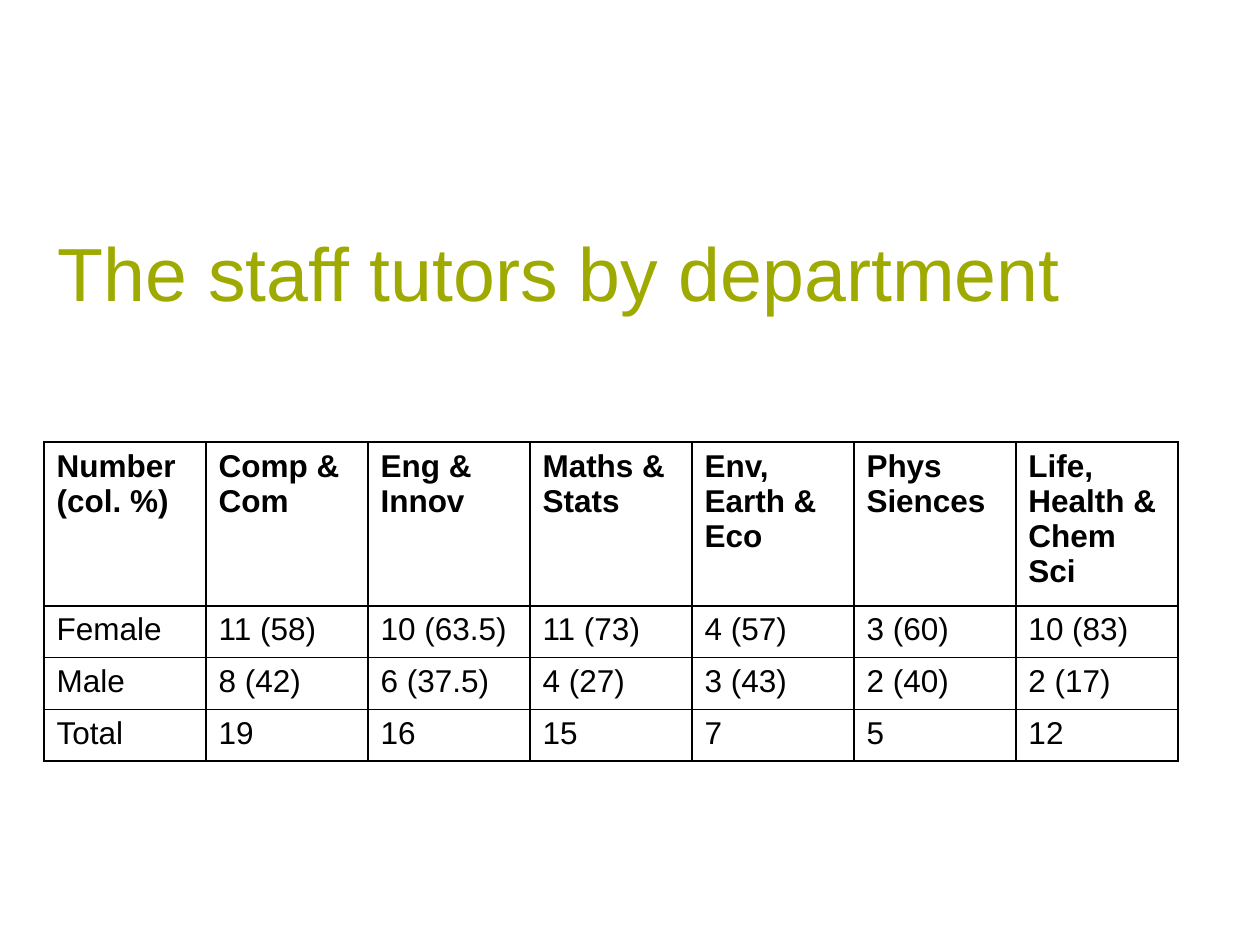
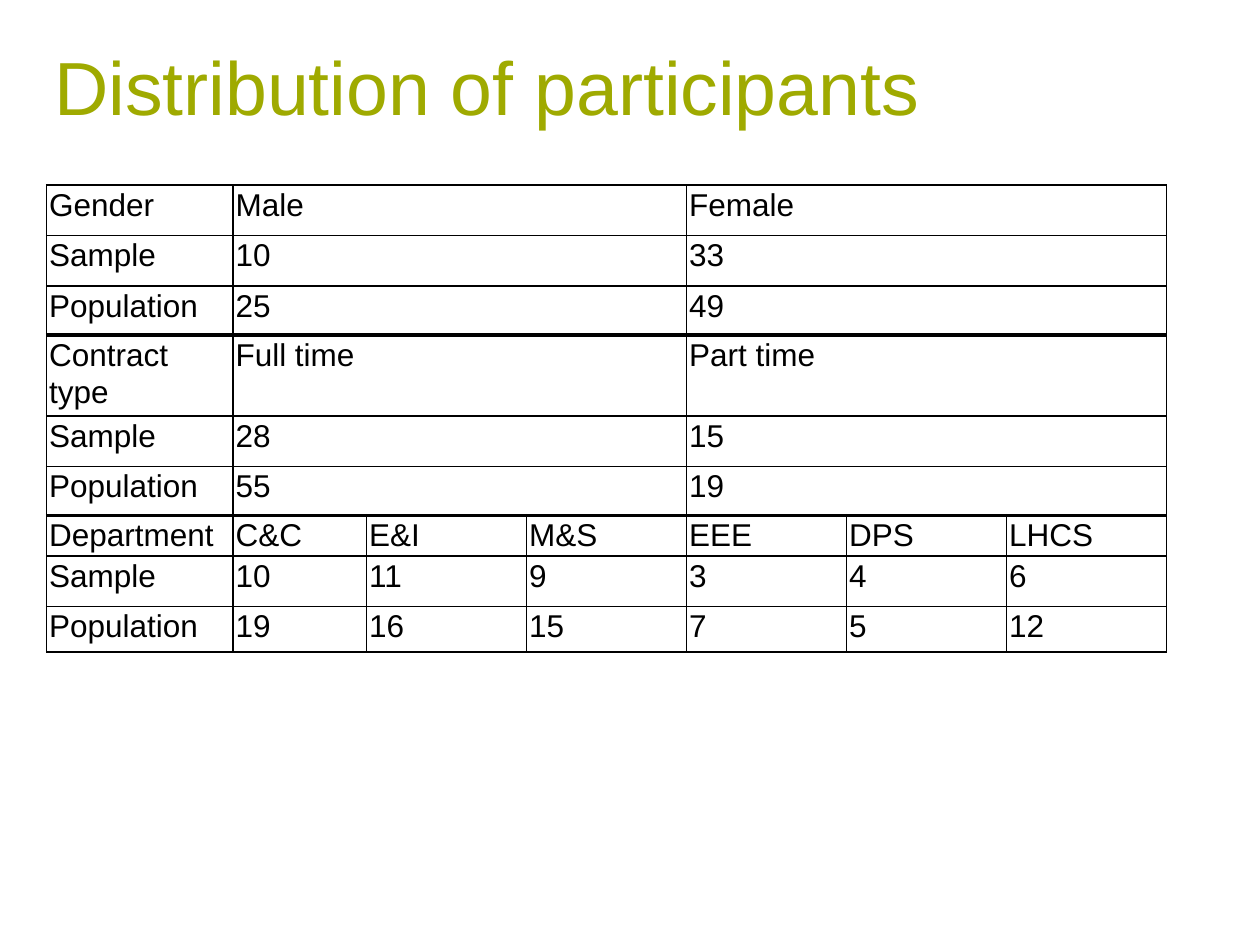
from pptx import Presentation, util as u
from pptx.dml.color import RGBColor
from pptx.enum import text
from pptx.oxml.ns import qn
from lxml import etree

OLIVE = RGBColor(0x9F, 0xAA, 0x00)
BLACK = RGBColor(0, 0, 0)
WHITE = RGBColor(0xFF, 0xFF, 0xFF)
FONT = "Arial"
THIN, THICK = 1, 2.25
TITLE_INSETS = TABLE_INSETS = (0.1, 0.05, 0.1, 0.05)
TIGHT_INSETS = (0.02, 0, 0.02, 0)

STAFF = [
    ["Number (col. %)", "Comp & Com", "Eng & Innov", "Maths & Stats",
     "Env, Earth & Eco", "Phys Siences", "Life, Health & Chem Sci"],
    ["Female", "11 (58)", "10 (63.5)", "11 (73)", "4 (57)", "3 (60)", "10 (83)"],
    ["Male", "8 (42)", "6 (37.5)", "4 (27)", "3 (43)", "2 (40)", "2 (17)"],
    ["Total", "19", "16", "15", "7", "5", "12"],
]
PARTICIPANTS = [
    ["Gender", "Male", "Female"],
    ["Sample", "10", "33"],
    ["Population", "25", "49"],
    ["Contract type", "Full time", "Part time"],
    ["Sample", "28", "15"],
    ["Population", "55", "19"],
    ["Department", "C&C", "E&I", "M&S", "EEE", "DPS", "LHCS"],
    ["Sample", "10", "11", "9", "3", "4", "6"],
    ["Population", "19", "16", "15", "7", "5", "12"],
]
SECTION_ROWS = 3


def style_font(font, size, colour, bold=False):
    font.name, font.size, font.bold = FONT, u.Pt(size), bold
    font.color.rgb = colour


def set_insets(frame, insets):
    """Set the margins of a text frame or a table cell, in inches."""
    (frame.margin_left, frame.margin_top,
     frame.margin_right, frame.margin_bottom) = map(u.Inches, insets)


def add_titled_slide(presentation, title, left, top):
    slide = presentation.slides.add_slide(presentation.slide_layouts[5])
    shape = slide.shapes.title
    shape.left, shape.top = u.Inches(left), u.Inches(top)
    shape.width, shape.height = u.Inches(9), u.Inches(0.8)
    frame = shape.text_frame
    frame.text = title
    frame.word_wrap = True
    frame.auto_size = text.MSO_AUTO_SIZE.SHAPE_TO_FIT_TEXT
    frame.vertical_anchor = text.MSO_ANCHOR.MIDDLE
    set_insets(frame, (0.08, 0.04, 0.08, 0.04))
    paragraph = frame.paragraphs[0]
    paragraph.alignment = text.PP_ALIGN.LEFT
    style_font(paragraph.runs[0].font, 43, OLIVE)
    return slide


def add_borders(cell, top, bottom):
    properties = cell._tc.get_or_add_tcPr()
    for side, width in (("L", THIN), ("R", THIN), ("T", top), ("B", bottom)):
        line = etree.SubElement(properties, qn(f"a:ln{side}"), w=str(u.Pt(width)))
        fill = etree.SubElement(line, qn("a:solidFill"))
        etree.SubElement(fill, qn("a:srgbClr"), val=str(BLACK))


def add_grid(slide, left, top, widths, heights):
    table = slide.shapes.add_table(
        len(heights), len(widths), u.Inches(left), u.Inches(top),
        u.Inches(sum(widths)), u.Inches(sum(heights))).table
    table.first_row = table.horz_banding = False
    for column, width in zip(table.columns, widths):
        column.width = u.Inches(width)
    for row, height in zip(table.rows, heights):
        row.height = u.Inches(height)
    return table


def fill_table(table, rows, insets, section=None, bold_header=False, spacing=None):
    """Spread each row's values evenly; a thick rule parts the sections."""
    value_columns = len(table.columns) - 1
    last = len(rows) - 1
    for r, (label, *values) in enumerate(rows):
        top = THICK if section and r and r % section == 0 else THIN
        bottom = THICK if section and r < last and (r + 1) % section == 0 else THIN
        for cell in table.rows[r].cells:
            add_borders(cell, top, bottom)
            cell.fill.solid()
            cell.fill.fore_color.rgb = WHITE
            set_insets(cell, insets)
        span = value_columns // len(values)
        starts = [0, *range(1, value_columns + 1, span)]
        for start, content in zip(starts, [label, *values]):
            cell = table.cell(r, start)
            if start and span > 1:
                cell.merge(table.cell(r, start + span - 1))
            cell.text_frame.text = content
            paragraph = cell.text_frame.paragraphs[0]
            paragraph.line_spacing = spacing
            style_font(paragraph.runs[0].font, 18, BLACK, bold_header and r == 0)


def main():
    presentation = Presentation()
    presentation.slide_width, presentation.slide_height = u.Inches(10), u.Inches(7.5)

    slide = add_titled_slide(presentation, "The staff tutors by department", 0.38, 1.75)
    table = add_grid(slide, 0.35, 3.51, [9 / 7] * 7, [1.22] + [0.41] * 3)
    fill_table(table, STAFF, TABLE_INSETS, bold_header=True)

    slide = add_titled_slide(presentation, "Distribution of participants", 0.35, 0.28)
    table = add_grid(slide, 0.37, 1.47, [1.48, 1.06] + [1.27] * 5,
                     [0.4, 0.4, 0.39, 0.6, 0.4, 0.39, 0.31, 0.4, 0.36])
    fill_table(table, PARTICIPANTS, TIGHT_INSETS, section=SECTION_ROWS, spacing=1.07)

    presentation.save("out.pptx")


if __name__ == "__main__":
    main()
